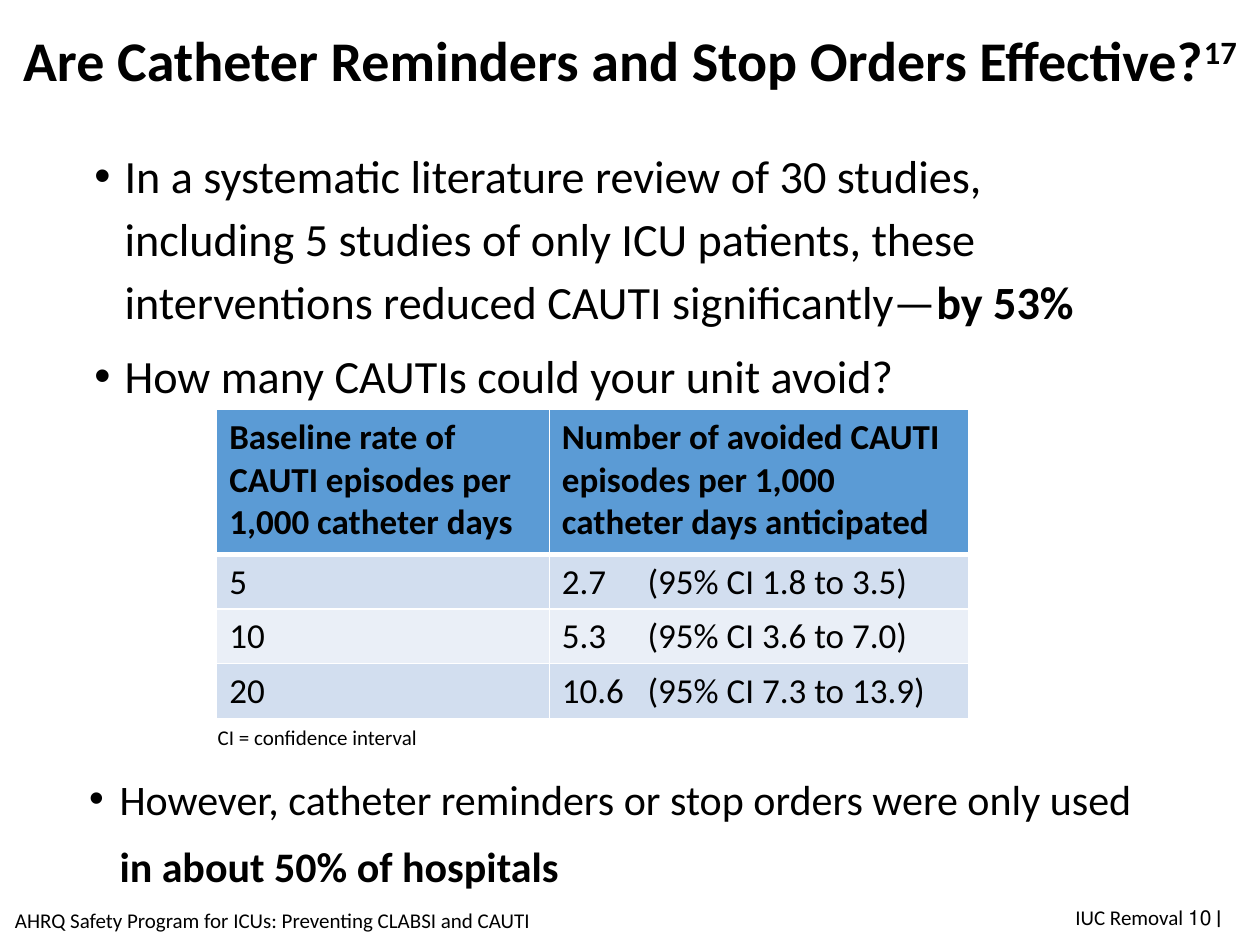
from dataclasses import dataclass

from pptx import Presentation
from pptx.dml.color import RGBColor as Rgb
from pptx.enum.text import MSO_ANCHOR as Anchor, PP_ALIGN as Align
from pptx.oxml.ns import qn
from pptx.util import Inches, Pt
from lxml.etree import SubElement


@dataclass(frozen=True)
class Theme:
    """Colours, font and type sizes of the slide."""
    font: str = "Calibri"
    ink: str = "000000"
    rule: str = "FFFFFF"
    header: str = "5B9BD5"
    bands: tuple = ("D2DEEF", "EAEFF7")
    title: float = 32
    body: float = 26.4
    closing: float = 24
    table: float = 20
    small: float = 12


THEME = Theme()
COLUMNS, ROWS = 100, 75
WIDTH, HEIGHT = Inches(10), Inches(7.5)
HANG = 2.4
RATE_TAB = 6.8


def across(columns):
    """Return the length of a number of grid columns."""
    return round(WIDTH * columns / COLUMNS)


def down(rows):
    """Return the length of a number of grid rows."""
    return round(HEIGHT * rows / ROWS)


def place(box):
    """Turn a box in grid units into slide lengths."""
    left, top, width, height = box
    return across(left), down(top), across(width), down(height)


def write(paragraph, text, size, bold=False, raised=False):
    """Add one formatted run to a paragraph."""
    run = paragraph.add_run()
    run.text = text
    run.font.name = THEME.font
    run.font.size = Pt(size)
    run.font.bold = bold
    run.font.color.rgb = Rgb.from_string(THEME.ink)
    if raised:
        run._r.get_or_add_rPr().set("baseline", "30000")


def add_frame(slide, box, anchor=Anchor.TOP):
    """Add a wrapping text box and return its text frame."""
    frame = slide.shapes.add_textbox(*place(box)).text_frame
    frame.word_wrap = True
    frame.vertical_anchor = anchor
    return frame


def set_bullet(paragraph):
    """Give a paragraph a hanging bullet."""
    properties = paragraph._p.get_or_add_pPr()
    properties.set("marL", str(across(HANG)))
    properties.set("indent", str(-across(HANG)))
    SubElement(properties, qn("a:buFont"), typeface="Arial")
    SubElement(properties, qn("a:buChar"), char="•")


def set_tab(paragraph, position):
    """Give a paragraph one left tab stop."""
    stops = SubElement(paragraph._p.get_or_add_pPr(), qn("a:tabLst"))
    SubElement(stops, qn("a:tab"), pos=str(position), algn="l")


def set_borders(cell, **widths):
    """Draw the four rules of a cell, one point wide unless given."""
    properties = cell._tc.get_or_add_tcPr()
    for side in "LRTB":
        width = Pt(widths.get(side, 1))
        line = SubElement(properties, qn(f"a:ln{side}"), w=str(width))
        fill = SubElement(line, qn("a:solidFill"))
        SubElement(fill, qn("a:srgbClr"), val=THEME.rule)


def add_title(slide, box, heading, reference):
    """Place the heading with its raised reference number."""
    paragraph = add_frame(slide, box, Anchor.MIDDLE).paragraphs[0]
    paragraph.alignment = Align.CENTER
    paragraph.line_spacing = 1.05
    write(paragraph, heading, THEME.title, bold=True)
    write(paragraph, reference, THEME.title, bold=True, raised=True)


def add_points(slide, box, points, size, spacing):
    """Place bullets, each a plain part and a bold part."""
    frame = add_frame(slide, box)
    for index, (plain, strong) in enumerate(points):
        paragraph = frame.add_paragraph() if index else frame.paragraphs[0]
        paragraph.line_spacing = spacing
        if index:
            paragraph.space_before = Pt(6)
        set_bullet(paragraph)
        write(paragraph, plain, size)
        if strong:
            write(paragraph, strong, size, bold=True)


def add_rates(slide, box, records):
    """Place the table of baseline rates and avoided episodes."""
    table = slide.shapes.add_table(len(records), 2, *place(box)).table
    for column, width in zip(table.columns, (26.4, 33.3)):
        column.width = across(width)
    for index, record in enumerate(records):
        heading = index == 0
        table.rows[index].height = down(11.5 if heading else 4.1)
        fill = THEME.header if heading else THEME.bands[(index - 1) % 2]
        edges = {0: {"B": 3}, 1: {"T": 3}}.get(index, {})
        for cell, text in zip(table.rows[index].cells, record):
            set_borders(cell, **edges)
            cell.fill.solid()
            cell.fill.fore_color.rgb = Rgb.from_string(fill)
            paragraph = cell.text_frame.paragraphs[0]
            if "\t" in text:
                set_tab(paragraph, across(RATE_TAB))
            write(paragraph, text, THEME.table, bold=heading)


def add_small(slide, box, text, align=Align.LEFT, anchor=Anchor.MIDDLE):
    """Place a line of small text, such as a footer or table note."""
    paragraph = add_frame(slide, box, anchor).paragraphs[0]
    paragraph.alignment = align
    write(paragraph, text, THEME.small)


def main():
    """Build and save the slide."""
    deck = Presentation()
    deck.slide_width, deck.slide_height = WIDTH, HEIGHT
    slide = deck.slides.add_slide(deck.slide_layouts[6])

    add_small(slide, (0, 71, 43.3, 4),
              "AHRQ Safety Program for ICUs: Preventing CLABSI and CAUTI",
              align=Align.CENTER)
    add_title(slide, (0, 0.1, 100, 8.9),
              "Are Catheter Reminders and Stop Orders Effective?", "17")
    add_points(slide, (6.5, 10.6, 81.3, 21.4), [
        ("In a systematic literature review of 30 studies, including 5 "
         "studies of only ICU patients, these interventions reduced CAUTI "
         "significantly—", "by 53%"),
        ("How many CAUTIs could your unit avoid?", ""),
    ], THEME.body, 1.14)
    add_rates(slide, (17.2, 32.5, 59.7, 24.5), [
        ("Baseline rate of CAUTI episodes per 1,000 catheter days",
         "Number of avoided CAUTI episodes per 1,000 catheter days "
         "anticipated"),
        ("5", "2.7\t(95% CI 1.8 to 3.5)"),
        ("10", "5.3\t(95% CI 3.6 to 7.0)"),
        ("20", "10.6\t(95% CI 7.3 to 13.9)"),
    ])
    add_small(slide, (16.3, 57, 59.7, 3), "CI = confidence interval",
              anchor=Anchor.TOP)
    add_points(slide, (6.1, 59.5, 87.1, 8.9), [
        ("However, catheter reminders or stop orders were only used ",
         "in about 50% of hospitals"),
    ], THEME.closing, 1.34)
    add_small(slide, (75.4, 70.8, 22.5, 4), "IUC Removal ׀ 10",
              align=Align.RIGHT)
    deck.save("out.pptx")


if __name__ == "__main__":
    main()
